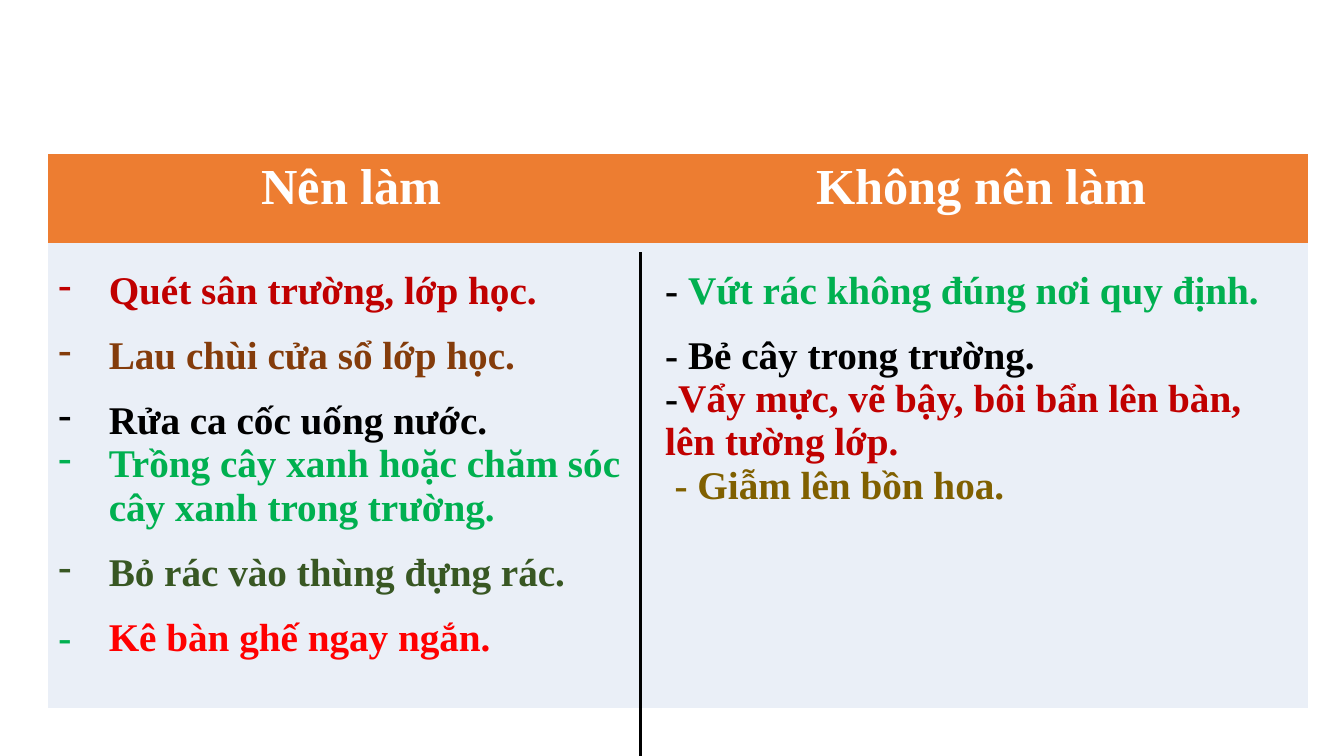
from dataclasses import dataclass

import lxml.etree
import pptx
import pptx.dml.color
import pptx.enum.shapes
import pptx.enum.text
import pptx.oxml.ns
import pptx.util

EMU_PER_PX = 9525
COLORS = {
    "white": "FFFFFF",
    "black": "000000",
    "orange": "ED7D31",
    "pale_blue": "EAEFF7",
    "dark_red": "C00000",
    "red": "FF0000",
    "brown": "843C0B",
    "green": "00B050",
    "dark_green": "385723",
    "olive": "806000",
}
COLUMN_WIDTHS = (578, 622)
ROW_HEIGHTS = (84, 443)
HANGING_INDENT = 48
DASH_TAB = 41


@dataclass(frozen=True)
class Piece:
    text: str
    color: str


@dataclass(frozen=True)
class Line:
    pieces: tuple[Piece, ...]
    spacing: float = 1.5
    bulleted: bool = False
    margin: int = 0
    tab: int = 0


@dataclass(frozen=True)
class Column:
    heading: str
    lines: tuple[Line, ...]


def bullet(text: str, color: str, spacing: float = 1.5) -> Line:
    return Line((Piece(text, color),), spacing, bulleted=True, margin=HANGING_INDENT)


COLUMNS = (
    Column("Nên làm", (
        bullet("Quét sân trường, lớp học.", "dark_red"),
        bullet("Lau chùi cửa sổ lớp học.", "brown"),
        bullet("Rửa ca cốc uống nước.", "black"),
        bullet("Trồng cây xanh hoặc chăm sóc cây xanh trong trường.", "green", 1.0),
        bullet("Bỏ rác vào thùng đựng rác.", "dark_green"),
        Line((Piece("-\t", "green"), Piece("Kê bàn ghế ngay ngắn.", "red")), tab=DASH_TAB),
    )),
    Column("Không nên làm", (
        Line((Piece("- ", "black"), Piece("Vứt rác không đúng nơi quy định.", "green"))),
        Line((Piece("- Bẻ cây trong trường.", "black"),)),
        Line((Piece("-", "black"),
              Piece("Vẩy mực, vẽ bậy, bôi bẩn lên bàn, lên tường lớp.", "dark_red")), 1.0),
        Line((Piece("- Giẫm lên bồn hoa.", "olive"),), 1.0, margin=9),
    )),
)


def px(length: int) -> pptx.util.Emu:
    return pptx.util.Emu(length * EMU_PER_PX)


def rgb(name: str) -> pptx.dml.color.RGBColor:
    return pptx.dml.color.RGBColor.from_string(COLORS[name])


def add_element(parent, tag: str, **attributes: str):
    return lxml.etree.SubElement(parent, pptx.oxml.ns.qn(tag), attributes)


def add_piece(paragraph, piece: Piece, size: int) -> None:
    run = paragraph.add_run()
    run.text = piece.text
    font_format = {"name": "Times New Roman", "size": pptx.util.Pt(size), "bold": True}
    for attribute, value in font_format.items():
        setattr(run.font, attribute, value)
    run.font.color.rgb = rgb(piece.color)


def format_cell(cell, color: str) -> None:
    properties = cell._tc.get_or_add_tcPr()
    for side in ("L", "R", "T", "B"):
        border = add_element(properties, f"a:ln{side}", w="0")
        add_element(border, "a:noFill")
    cell.fill.solid()
    cell.fill.fore_color.rgb = rgb(color)


def fill_heading(cell, heading: str) -> None:
    format_cell(cell, "orange")
    paragraph = cell.text_frame.paragraphs[0]
    paragraph.alignment = pptx.enum.text.PP_ALIGN.CENTER
    add_piece(paragraph, Piece(heading, "white"), 36)


def fill_body(cell, lines: tuple[Line, ...]) -> None:
    format_cell(cell, "pale_blue")
    frame = cell.text_frame
    for index, line in enumerate(lines):
        paragraph = frame.add_paragraph() if index else frame.paragraphs[0]
        paragraph.line_spacing = line.spacing
        properties = paragraph._p.get_or_add_pPr()
        properties.set("marL", str(px(line.margin)))
        properties.set("indent", str(-px(line.margin) if line.bulleted else 0))
        if line.bulleted:
            add_element(properties, "a:buFontTx")
            add_element(properties, "a:buChar", char="-")
        else:
            add_element(properties, "a:buNone")
        if line.tab:
            tabs = add_element(properties, "a:tabLst")
            add_element(tabs, "a:tab", pos=str(px(line.tab)), algn="l")
        for piece in line.pieces:
            add_piece(paragraph, piece, 28)


def add_comparison_table(slide) -> None:
    table = slide.shapes.add_table(
        len(ROW_HEIGHTS), len(COLUMNS), px(46), px(147),
        px(sum(COLUMN_WIDTHS)), px(sum(ROW_HEIGHTS)),
    ).table
    for row, height in zip(table.rows, ROW_HEIGHTS):
        row.height = px(height)
    for index, (column, width) in enumerate(zip(COLUMNS, COLUMN_WIDTHS)):
        table.columns[index].width = px(width)
        fill_heading(table.cell(0, index), column.heading)
        fill_body(table.cell(1, index), column.lines)


def add_divider(slide) -> None:
    divider = slide.shapes.add_connector(
        pptx.enum.shapes.MSO_CONNECTOR.STRAIGHT, px(610), px(756), px(610), px(240)
    )
    divider.line.color.rgb = rgb("black")
    divider.line.width = pptx.util.Pt(1.5)
    add_element(divider._element.spPr, "a:effectLst")


def main() -> None:
    presentation = pptx.Presentation()
    presentation.slide_width = px(1280)
    presentation.slide_height = px(720)
    slide = presentation.slides.add_slide(presentation.slide_layouts[6])
    add_comparison_table(slide)
    add_divider(slide)
    presentation.save("out.pptx")


if __name__ == "__main__":
    main()
